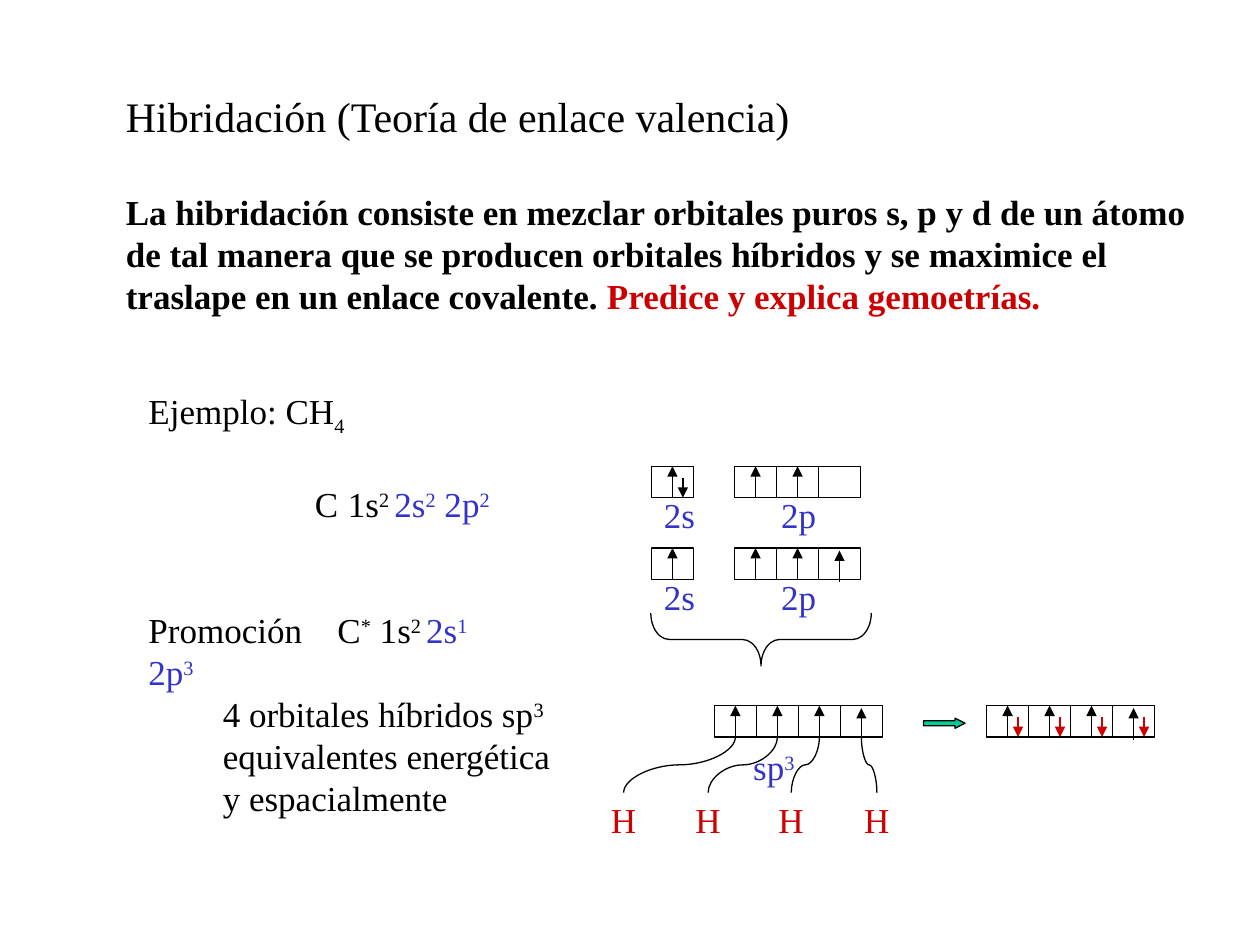
from lxml.etree import SubElement
from pptx import Presentation
from pptx.dml.color import RGBColor
from pptx.enum.shapes import MSO_CONNECTOR, MSO_SHAPE
from pptx.enum.text import MSO_AUTO_SIZE
from pptx.oxml.ns import qn
from pptx.util import Inches, Pt

BLACK = RGBColor(0x00, 0x00, 0x00)
RED = RGBColor(0xCC, 0x00, 0x00)
BLUE = RGBColor(0x33, 0x33, 0xCC)
GREEN = RGBColor(0x00, 0xCC, 0x99)
CELL_WIDTH = 1 / 3
CELL_HEIGHT = 0.25
SUPER, SUB = 30, -25


class SlideBuilder:
    font = "Times New Roman"
    line_width = Pt(0.75)

    def __init__(self, slide):
        self.slide = slide

    def text_box(self, left, top, width, height, wrap=True):
        box = self.slide.shapes.add_textbox(
            Inches(left), Inches(top), Inches(width), Inches(height))
        box.text_frame.word_wrap = wrap
        box.text_frame.auto_size = MSO_AUTO_SIZE.SHAPE_TO_FIT_TEXT
        return box.text_frame

    def add_spans(self, para, spans, size=20, bold=False, before=None):
        """Fill a paragraph with (text, colour, baseline percent) spans."""
        if before:
            para.space_before = Pt(before)
        for text, color, baseline in spans:
            span = para.add_run()
            span.text = text
            span.font.name = self.font
            span.font.size = Pt(size)
            span.font.bold = bold
            span.font.color.rgb = color
            if baseline:
                span.font._element.set("baseline", str(baseline * 1000))

    def tab_stop(self, para, position, indent=0):
        properties = para._p.get_or_add_pPr()
        properties.set("marL", str(Inches(indent)))
        properties.set("indent", "0")
        stops = SubElement(properties, qn("a:tabLst"))
        SubElement(stops, qn("a:tab"), pos=str(Inches(position)), algn="l")

    def label(self, left, top, width, spans):
        frame = self.text_box(left, top, width, 0.43, wrap=False)
        self.add_spans(frame.paragraphs[0], spans)

    def shape(self, kind, left, top, width, height, fill=None, adjustments=()):
        shape = self.slide.shapes.add_shape(
            kind, Inches(left), Inches(top), Inches(width), Inches(height))
        shape.shadow.inherit = False
        if fill is None:
            shape.fill.background()
        else:
            shape.fill.solid()
            shape.fill.fore_color.rgb = fill
        shape.line.color.rgb = BLACK
        shape.line.width = self.line_width
        for index, value in enumerate(adjustments):
            shape.adjustments[index] = value
        return shape

    def connector(self, kind, start, end, color=BLACK):
        line = self.slide.shapes.add_connector(
            kind, *(Inches(value) for value in (*start, *end)))
        line.line.color.rgb = color
        line.line.width = self.line_width
        SubElement(line._element.spPr, qn("a:effectLst"))
        return line

    def electron(self, x, start, end, color=BLACK):
        arrow = self.connector(MSO_CONNECTOR.STRAIGHT, (x, start), (x, end), color)
        SubElement(arrow.get_or_add_ln(), qn("a:tailEnd"), type="triangle")

    def orbitals(self, left, top, cells, up, lowered_last=False, down=0, down_color=RED):
        """Draw a row of cells with electrons pointing up and down."""
        for index in range(cells):
            self.shape(MSO_SHAPE.RECTANGLE, left + index * CELL_WIDTH, top,
                       CELL_WIDTH, CELL_HEIGHT)
        for index in range(up):
            x = left + (index + 0.5) * CELL_WIDTH
            y = top + 0.02 if lowered_last and index == up - 1 else top
            self.electron(x, y + CELL_HEIGHT, y)
        for index in range(down):
            x = left + (index + 0.75) * CELL_WIDTH
            self.electron(x, top + 0.09, top + CELL_HEIGHT, down_color)

    def bond(self, start, end):
        """Draw a curve that leaves start and reaches end vertically."""
        across, rise = end[0] - start[0], start[1] - end[1]
        middle_x, middle_y = (start[0] + end[0]) / 2, (start[1] + end[1]) / 2
        side = rise / 2 if across > 0 else -rise / 2
        half = abs(across) / 2
        curve = self.connector(MSO_CONNECTOR.CURVE,
                               (middle_x - side, middle_y - half),
                               (middle_x + side, middle_y + half))
        angle = 270 if across > 0 else 90
        curve._element.spPr.find(qn("a:xfrm")).set("rot", str(angle * 60000))


def add_texts(builder):
    frame = builder.text_box(0.9, 0.67, 8.85, 1.9)
    builder.add_spans(frame.paragraphs[0],
                      [("Hibridación (Teoría de enlace valencia)", BLACK, 0)], size=24)
    builder.add_spans(frame.add_paragraph(), [
        ("La hibridación consiste en mezclar orbitales puros s, p y d de un átomo "
         "de tal manera que se producen orbitales híbridos y se maximice el "
         "traslape en un enlace covalente. ", BLACK, 0),
        ("Predice y explica gemoetrías.", RED, 0)], bold=True, before=28)

    frame = builder.text_box(1.08, 3.04, 3.1, 2.48)
    builder.add_spans(frame.paragraphs[0], [("Ejemplo: CH", BLACK, 0), ("4", BLACK, SUB)])
    configurations = [("C\t1s", "", "2", "2", 1.32, 1.71, 26),
                      ("Promoción\tC", "*", "1", "3", 0, 1.36, 48)]
    for start, mark, s_count, p_count, indent, tab, before in configurations:
        para = frame.add_paragraph()
        spans = [(start, BLACK, 0)]
        if mark:
            spans += [(mark, BLACK, SUPER), (" 1s", BLACK, 0)]
        spans += [("2 ", BLACK, SUPER), ("2s", BLUE, 0), (s_count, BLUE, SUPER),
                  (" 2p", BLUE, 0), (p_count, BLUE, SUPER)]
        builder.add_spans(para, spans, before=before)
        builder.tab_stop(para, tab, indent)

    frame = builder.text_box(1.67, 5.45, 2.83, 1.1)
    builder.add_spans(frame.paragraphs[0], [
        ("4 orbitales híbridos sp", BLACK, 0), ("3 ", BLACK, SUPER),
        ("equivalentes energética y espacialmente", BLACK, 0)])


def add_diagram(builder):
    builder.orbitals(5.17, 3.7, 1, up=1, down=1, down_color=BLACK)
    builder.orbitals(5.83, 3.7, 3, up=2)
    builder.orbitals(5.17, 4.35, 1, up=1)
    builder.orbitals(5.83, 4.35, 3, up=3, lowered_last=True)
    for top in (3.87, 4.52):
        builder.label(5.17, top, 0.45, [("2s", BLUE, 0)])
        builder.label(6.1, top, 0.48, [("2p", BLUE, 0)])
    brace = builder.shape(MSO_SHAPE.LEFT_BRACE, 5.83, 4.2, 0.42, 1.75,
                          adjustments=(0.35, 0.5))
    brace.rotation = 270

    hybrid_left, hybrid_top = 5.67, 5.6
    builder.orbitals(hybrid_left, hybrid_top, 4, up=4, lowered_last=True)
    builder.label(5.88, 5.87, 0.54, [("sp", BLUE, 0), ("3", BLUE, SUPER)])
    hydrogen_top = 6.29
    for index, left in enumerate((4.75, 5.42, 6.08, 6.76)):
        builder.label(left, hydrogen_top, 0.4, [("H", RED, 0)])
        orbital_x = hybrid_left + (index + 0.5) * CELL_WIDTH
        builder.bond((left + 0.2, hydrogen_top), (orbital_x, hybrid_top + CELL_HEIGHT))

    builder.shape(MSO_SHAPE.RIGHT_ARROW, 7.33, 5.7, 0.33, 0.08, GREEN, (0.5, 1))
    builder.orbitals(7.83, hybrid_top, 4, up=4, lowered_last=True, down=4)


def main():
    deck = Presentation()
    deck.slide_width, deck.slide_height = Inches(10), Inches(7.5)
    builder = SlideBuilder(deck.slides.add_slide(deck.slide_layouts[6]))
    add_texts(builder)
    add_diagram(builder)
    deck.save("out.pptx")


if __name__ == "__main__":
    main()
